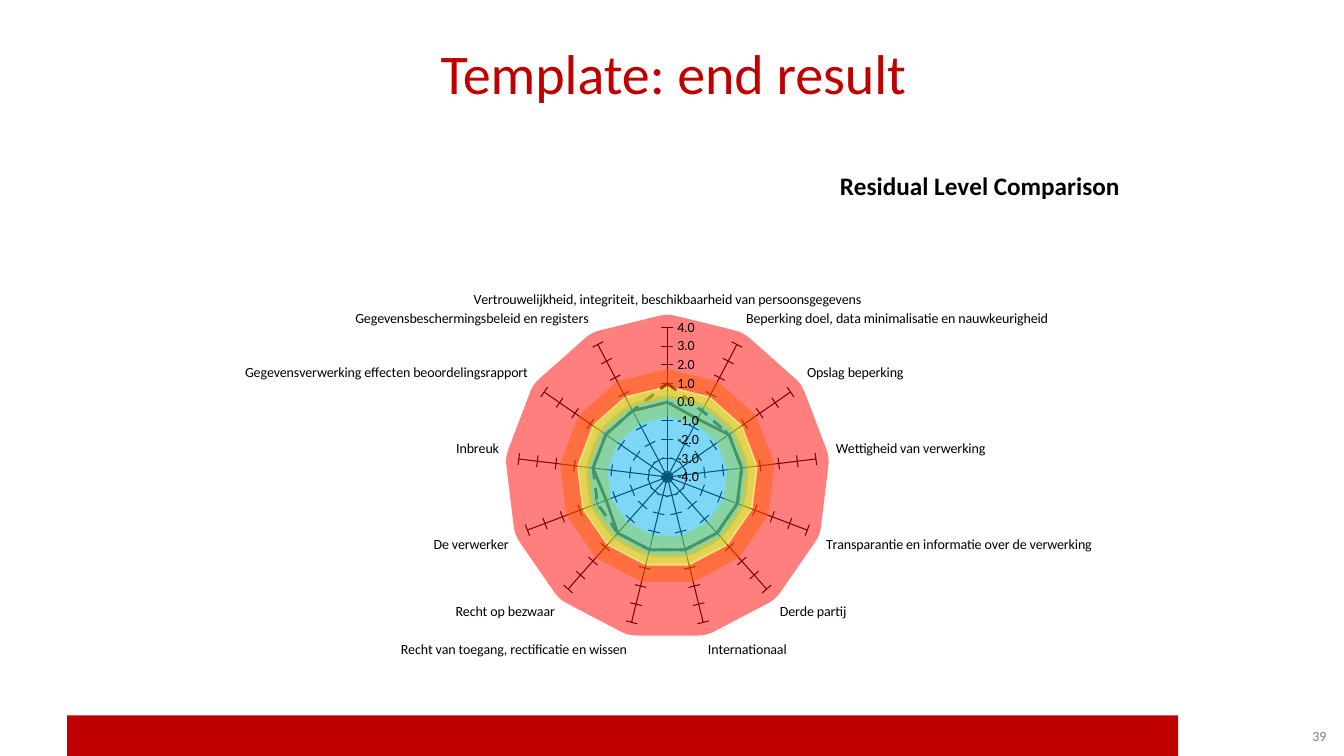
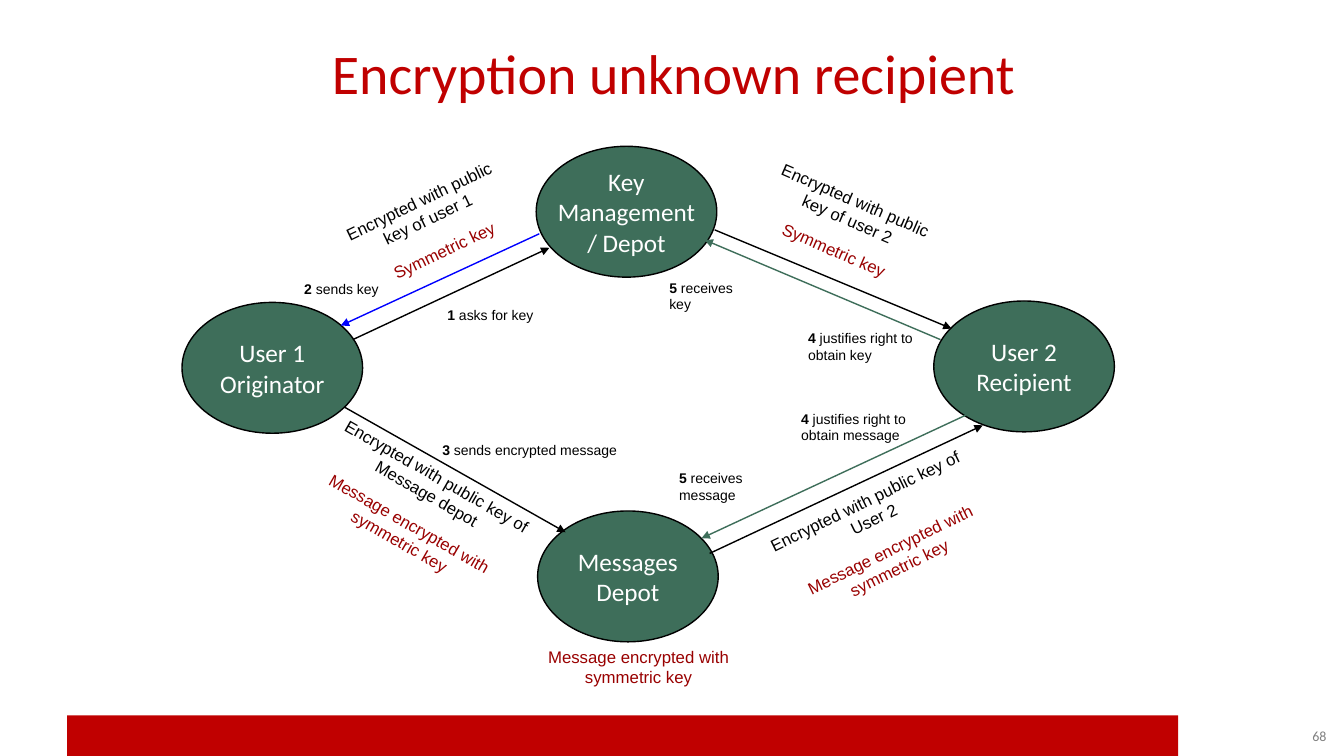
from dataclasses import dataclass

from lxml.etree import SubElement
from pptx import Presentation
from pptx.chart.data import CategoryChartData
from pptx.dml.color import RGBColor
from pptx.enum.chart import XL_CHART_TYPE, XL_TICK_MARK
from pptx.enum.dml import MSO_LINE
from pptx.enum.shapes import MSO_CONNECTOR, MSO_SHAPE
from pptx.enum.text import MSO_ANCHOR, PP_ALIGN
from pptx.oxml.ns import qn
from pptx.util import Pt


@dataclass(frozen=True)
class Theme:
    red: RGBColor = RGBColor(0xC0, 0x00, 0x00)
    dark_red: RGBColor = RGBColor(0x99, 0x00, 0x00)
    green: RGBColor = RGBColor(0x3E, 0x6E, 0x5A)
    blue: RGBColor = RGBColor(0x00, 0x00, 0xFF)
    gray: RGBColor = RGBColor(0x80, 0x80, 0x80)
    black: RGBColor = RGBColor(0x00, 0x00, 0x00)
    white: RGBColor = RGBColor(0xFF, 0xFF, 0xFF)
    heading_font: str = "Calibri"
    label_font: str = "Arial"
    title_size: int = 40
    node_size: int = 18
    caption_size: int = 12
    small_size: int = 10


THEME = Theme()

CATEGORIES = [
    "Vertrouwelijkheid, integriteit, beschikbaarheid van persoonsgegevens",
    "Beperking doel, data minimalisatie en nauwkeurigheid",
    "Opslag beperking",
    "Wettigheid van verwerking",
    "Transparantie en informatie over de verwerking",
    "Derde partij",
    "Internationaal",
    "Recht van toegang, rectificatie en wissen",
    "Recht op bezwaar",
    "De verwerker",
    "Inbreuk",
    "Gegevensverwerking effecten beoordelingsrapport",
    "Gegevensbeschermingsbeleid en registers",
]
COUNT = len(CATEGORIES)
LEVELS = [
    [0, -0.5] + [0] * 7 + [-0.5, 0, 0, 0],
    [1] + [0] * (COUNT - 1),
]
RINGS = [(-2.5, "00B0F0", 76), (0, "92D050", 20), (1, "FFC000", 20), (2.8, "FF0000", 50)]

NODES = [
    (667, 215, "User 2\nRecipient"),
    (130, 216, "User 1\nOriginator"),
    (383, 104.5, "Key\nManagement\n/ Depot"),
    (384, 365, "Messages\nDepot"),
]
ARROWS = [
    (252, 242.6, 392.4, 177, THEME.black),
    (385.2, 167, 243.4, 232.6, THEME.blue),
    (246.2, 290.9, 404, 380.2, THEME.black),
    (671.8, 242.6, 503.3, 171.4, THEME.green),
    (689.8, 296.6, 501.1, 384.5, THEME.green),
    (510.5, 164.2, 679.7, 234.7, THEME.black),
    (506.9, 395.3, 702, 303.8, THEME.black),
]
STEPS = [
    (312.5, 215.3, 82, "1", " asks for key"),
    (210.2, 196.6, 73, "2", " sends key"),
    (308.9, 311.8, 150, "3", " sends encrypted message"),
    (570.2, 231.8, 97, "4", " justifies right to\nobtain key"),
    (565.2, 289.4, 97, "4", " justifies right to\nobtain message"),
    (471, 195.8, 72, "5", " receives\nkey"),
    (478, 331.9, 85, "5", " receives\nmessage"),
]
ENCRYPTED_MESSAGE = "Message encrypted with\nsymmetric key"
CAPTIONS = [
    (267, 167.8, 101, 23, -25.7, "Symmetric key", THEME.dark_red),
    (233.3, 131.8, 138, 36, -25.7, "Encrypted with public key of user 1", THEME.black),
    (213.5, 362.2, 151, 36, 29.8, ENCRYPTED_MESSAGE, THEME.dark_red),
    (221.8, 328.3, 173.5, 36, 29.8, "Encrypted with public key of Message depot", THEME.black),
    (380.7, 458.6, 151, 36, 0, ENCRYPTED_MESSAGE, THEME.dark_red),
    (545, 167.8, 101, 23, 23.5, "Symmetric key", THEME.dark_red),
    (539.3, 131.8, 138, 36, 23.5, "Encrypted with public key of user 2", THEME.black),
    (563.5, 380.9, 151, 36, -26.1, ENCRYPTED_MESSAGE, THEME.dark_red),
    (534.2, 346.3, 173.5, 36, -26.1, "Encrypted with public key of User 2", THEME.black),
]


def style_font(font, name, size, color, bold=False):
    font.name = name
    font.size = Pt(size)
    font.color.rgb = color
    font.bold = bold


def style_text(text_frame, name, size, color, alignment=PP_ALIGN.LEFT):
    for paragraph in text_frame.paragraphs:
        paragraph.alignment = alignment
        for run in paragraph.runs:
            style_font(run.font, name, size, color)


def add_text(slide, box, text, name, size, color, alignment):
    shape = slide.shapes.add_textbox(*map(Pt, box))
    shape.text_frame.word_wrap = True
    shape.text_frame.text = text
    style_text(shape.text_frame, name, size, color, alignment)
    return shape


def prepare_layout(presentation):
    layout = presentation.slide_layouts[5]
    title = layout.placeholders[0]
    title.left, title.top, title.width, title.height = map(Pt, (49, 15, 864, 73))
    return layout


def add_band(slide):
    band = slide.shapes.add_shape(MSO_SHAPE.RECTANGLE, *map(Pt, (48, 511, 793.5, 29)))
    band.shadow.inherit = False
    band.fill.solid()
    band.fill.fore_color.rgb = THEME.red
    band.line.fill.background()
    slide.slide_layout.shapes.element.insert(2, band.element)


def add_slide(presentation, layout, title, number):
    slide = presentation.slides.add_slide(layout)
    text_frame = slide.shapes.title.text_frame
    text_frame.text = title
    style_text(text_frame, THEME.heading_font, THEME.title_size, THEME.red, PP_ALIGN.CENTER)
    number_box = add_text(slide, (876, 511, 78.5, 29), number, THEME.heading_font,
                          THEME.small_size, THEME.gray, PP_ALIGN.RIGHT)
    number_box.text_frame.vertical_anchor = MSO_ANCHOR.MIDDLE
    return slide


def place(layout_element, **values):
    manual = SubElement(layout_element, qn("c:manualLayout"))
    for tag, value in values.items():
        SubElement(manual, qn(f"c:{tag}")).set("val", str(value))


def style_series(series, element, color, width, dash=None, alpha=None):
    line = series.format.line
    line.color.rgb = color
    line.width = Pt(width)
    if dash:
        line.dash_style = dash
    outline = element.find(f"{qn('c:spPr')}/{qn('a:ln')}")
    SubElement(outline, qn("a:round"))
    if alpha:
        color_element = outline.find(f"{qn('a:solidFill')}/{qn('a:srgbClr')}")
        SubElement(color_element, qn("a:alpha")).set("val", str(alpha * 1000))


def add_radar(slide):
    data = CategoryChartData(number_format="0.0")
    data.categories = CATEGORIES
    rows = LEVELS + [[value] * COUNT for value, _, _ in RINGS]
    for index, values in enumerate(rows, 1):
        data.add_series(f"Series {index}", values)
    chart = slide.shapes.add_chart(
        XL_CHART_TYPE.RADAR, *map(Pt, (156, 109, 648, 414)), data).chart
    chart.has_legend = False
    style_font(chart.font, THEME.heading_font, THEME.small_size, THEME.black)

    chart.has_title = True
    title = chart.chart_title
    title.text_frame.text = "Residual Level Comparison"
    style_font(title.text_frame.paragraphs[0].runs[0].font,
               THEME.heading_font, THEME.node_size, THEME.black, bold=True)
    title.element.find(qn("c:overlay")).set("val", "1")
    place(title.element.find(qn("c:layout")), xMode="edge", yMode="edge", x=0.68, y=0.02)

    plot_area = chart.element.find(f".//{qn('c:plotArea')}")
    plot_layout = plot_area.find(qn("c:layout"))
    if plot_layout is None:
        plot_layout = plot_area.makeelement(qn("c:layout"))
        plot_area.insert(0, plot_layout)
    place(plot_layout, layoutTarget="inner", xMode="edge", yMode="edge",
          x=0.33, y=0.3, w=0.33, h=0.52)

    chart.plots[0].vary_by_categories = False
    chart.category_axis.has_major_gridlines = True
    axis = chart.value_axis
    axis.has_major_gridlines = False
    axis.minimum_scale, axis.maximum_scale, axis.major_unit = -4, 4, 1
    axis.major_tick_mark = XL_TICK_MARK.CROSS
    axis.tick_labels.number_format = "0.0"
    axis.tick_labels.number_format_is_linked = False
    for line in (axis.format.line, chart.category_axis.major_gridlines.format.line):
        line.color.rgb = THEME.black
        line.width = Pt(0.75)

    styles = [(THEME.black, 2), (THEME.black, 2, MSO_LINE.DASH)]
    styles += [(RGBColor.from_string(color), width, None, 50) for _, color, width in RINGS]
    for series, element, style in zip(chart.series, plot_area.iter(qn("c:ser")), styles):
        style_series(series, element, *style)


def add_node(slide, left, top, text):
    shape = slide.shapes.add_shape(MSO_SHAPE.OVAL, *map(Pt, (left, top, 129, 93.5)))
    shape.shadow.inherit = False
    shape.fill.solid()
    shape.fill.fore_color.rgb = THEME.green
    shape.line.color.rgb = THEME.black
    shape.line.width = Pt(1)
    text_frame = shape.text_frame
    text_frame.word_wrap = False
    text_frame.vertical_anchor = MSO_ANCHOR.MIDDLE
    text_frame.text = text
    style_text(text_frame, THEME.heading_font, THEME.node_size, THEME.white, PP_ALIGN.CENTER)


def add_arrow(slide, start_x, start_y, end_x, end_y, color):
    connector = slide.shapes.add_connector(
        MSO_CONNECTOR.STRAIGHT, *map(Pt, (start_x, start_y, end_x, end_y)))
    connector.line.color.rgb = color
    connector.line.width = Pt(1)
    properties = connector.element.spPr
    SubElement(properties.find(qn("a:ln")), qn("a:tailEnd")).set("type", "triangle")
    SubElement(properties, qn("a:effectLst"))


def add_step(slide, left, top, width, number, text):
    first, *others = text.split("\n")
    height = 21 + 12 * len(others)
    shape = add_text(slide, (left, top, width, height), "\n".join([number, *others]),
                     THEME.label_font, THEME.small_size, THEME.black, PP_ALIGN.LEFT)
    paragraph = shape.text_frame.paragraphs[0]
    paragraph.runs[0].font.bold = True
    run = paragraph.add_run()
    run.text = first
    style_font(run.font, THEME.label_font, THEME.small_size, THEME.black)


def add_caption(slide, left, top, width, height, rotation, text, color):
    shape = add_text(slide, (left, top, width, height), text, THEME.label_font,
                     THEME.caption_size, color, PP_ALIGN.CENTER)
    shape.rotation = rotation


def add_diagram(slide):
    for add_element, rows in ((add_node, NODES), (add_arrow, ARROWS),
                              (add_step, STEPS), (add_caption, CAPTIONS)):
        for row in rows:
            add_element(slide, *row)


def main():
    presentation = Presentation()
    presentation.slide_width, presentation.slide_height = Pt(960), Pt(540)
    layout = prepare_layout(presentation)
    result_slide = add_slide(presentation, layout, "Template: end result", "39")
    add_band(result_slide)
    add_radar(result_slide)
    add_diagram(add_slide(presentation, layout, "Encryption unknown recipient", "68"))
    presentation.save("out.pptx")


if __name__ == "__main__":
    main()
